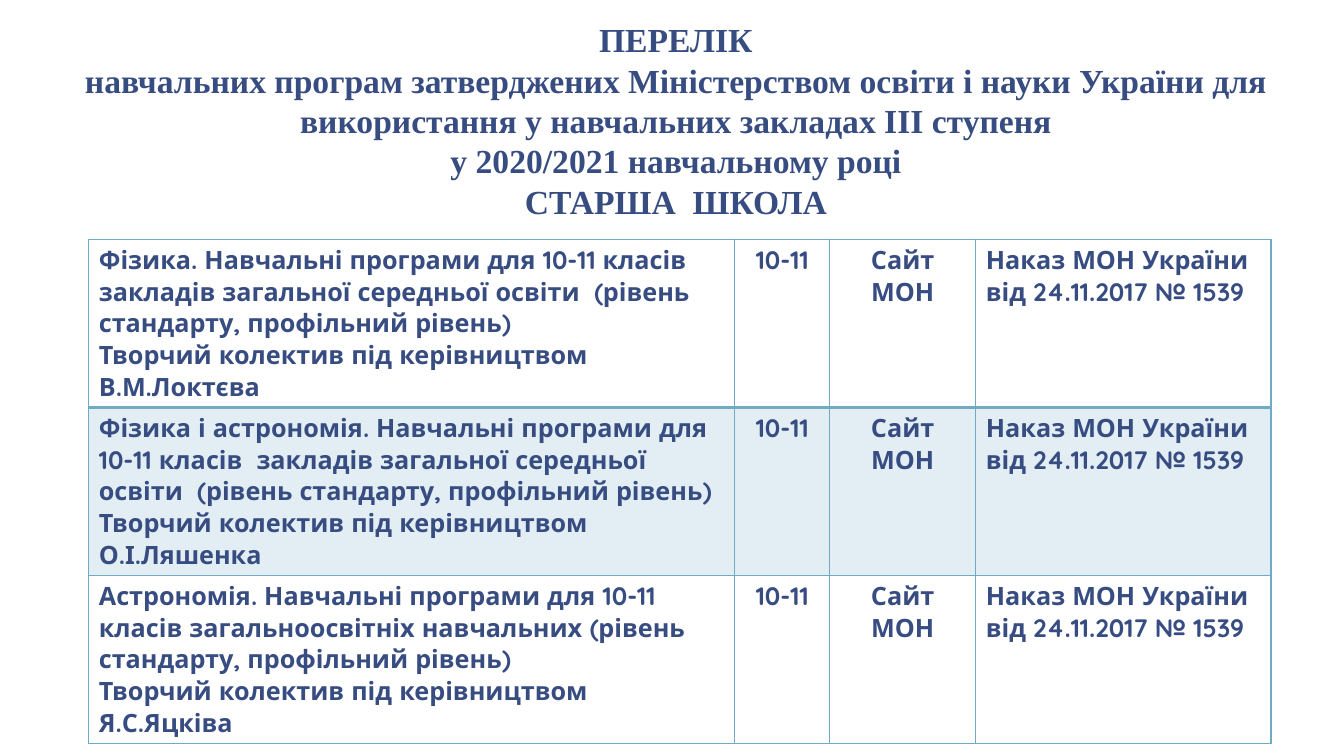
"""Build a slide listing the approved senior school curricula."""
from lxml import etree
from pptx import Presentation, util as u
from pptx.dml.color import RGBColor
from pptx.enum import text as t
from pptx.oxml import ns

TITLE = [
    "ПЕРЕЛІК",
    "навчальних програм затверджених Міністерством освіти і науки України "
    "для використання у навчальних закладах ІІІ ступеня",
    "у 2020/2021 навчальному році",
    "СТАРША  ШКОЛА",
]
COURSES = [
    ("Фізика. Навчальні програми для 10-11 класів  закладів загальної "
     "середньої освіти  (рівень стандарту, профільний рівень)", "В.М.Локтєва"),
    ("Фізика і астрономія. Навчальні програми для 10-11 класів  закладів загальної "
     "середньої освіти  (рівень стандарту, профільний рівень)", "О.І.Ляшенка"),
    ("Астрономія. Навчальні програми для 10-11 класів загальноосвітніх "
     "навчальних (рівень стандарту, профільний рівень)", "Я.С.Яцківа"),
]
LEAD = "Творчий колектив під керівництвом "
SHARED = ["10-11", "Сайт МОН", "Наказ МОН України від 24.11.2017 № 1539"]

THEME = {
    "ink": RGBColor.from_string("374C81"),
    "line": "70AAC4",
    "tint": 20,
    "head": {"name": "Times New Roman", "size": u.Pt(24), "bold": True},
    "body": {"name": "Quicksand", "size": u.Pt(18), "bold": True},
}
HEAD_BOX = (46.8, 5.76, 871.9, 156.96)
HEAD_PAD = {"margin_left": 9.36, "margin_right": 9.36,
            "margin_top": 5.04, "margin_bottom": 5.04}
GRID_AT = (63.4, 171.1)
COLS = [461.5, 67.7, 104.4, 210.9]
ROW = 120
ALIGN = [t.PP_ALIGN.LEFT, t.PP_ALIGN.CENTER, t.PP_ALIGN.CENTER, t.PP_ALIGN.LEFT]


def style(para, kind, align):
    para.alignment = align
    for key, val in THEME[kind].items():
        setattr(para.font, key, val)
    para.font.color.rgb = THEME["ink"]


def border(cell, widths):
    props = cell._tc.get_or_add_tcPr()
    for i, (side, width) in enumerate(widths.items()):
        line = etree.Element(ns.qn("a:ln" + side), w=str(u.Pt(width)))
        fill = etree.SubElement(line, ns.qn("a:solidFill"))
        etree.SubElement(fill, ns.qn("a:srgbClr"), val=THEME["line"])
        props.insert(i, line)


def shade(cell, tinted):
    if not tinted:
        cell.fill.background()
        return
    cell.fill.solid()
    cell.fill.fore_color.rgb = RGBColor.from_string(THEME["line"])
    tone = cell._tc.tcPr.find(".//" + ns.qn("a:srgbClr"))
    etree.SubElement(tone, ns.qn("a:alpha"), val=str(THEME["tint"] * 1000))


def add_title(slide):
    frame = slide.shapes.add_textbox(*map(u.Pt, HEAD_BOX)).text_frame
    frame.word_wrap = True
    frame.vertical_anchor = t.MSO_ANCHOR.BOTTOM
    for key, val in HEAD_PAD.items():
        setattr(frame, key, u.Pt(val))
    frame.text = "\v".join(TITLE)
    style(frame.paragraphs[0], "head", t.PP_ALIGN.CENTER)


def add_grid(slide):
    count = len(COURSES)
    box = (*GRID_AT, sum(COLS), ROW * count)
    grid = slide.shapes.add_table(count, len(COLS), *map(u.Pt, box)).table
    grid.first_row = grid.horz_banding = False
    for col, width in zip(grid.columns, COLS):
        col.width = u.Pt(width)
    for r, (course, author) in enumerate(COURSES):
        grid.rows[r].height = u.Pt(ROW)
        for c, words in enumerate([f"{course}\n{LEAD}{author}", *SHARED]):
            cell = grid.cell(r, c)
            cell.text = words
            for para in cell.text_frame.paragraphs:
                style(para, "body", ALIGN[c])
            shade(cell, r % 2)
            border(cell, {"L": 1, "R": 1, "T": 2 if r == 1 else 1,
                          "B": 2 if r == 0 else 1})


def main():
    deck = Presentation()
    deck.slide_width, deck.slide_height = u.Pt(960), u.Pt(540)
    slide = deck.slides.add_slide(deck.slide_layouts[6])
    add_title(slide)
    add_grid(slide)
    deck.save("out.pptx")


if __name__ == "__main__":
    main()
